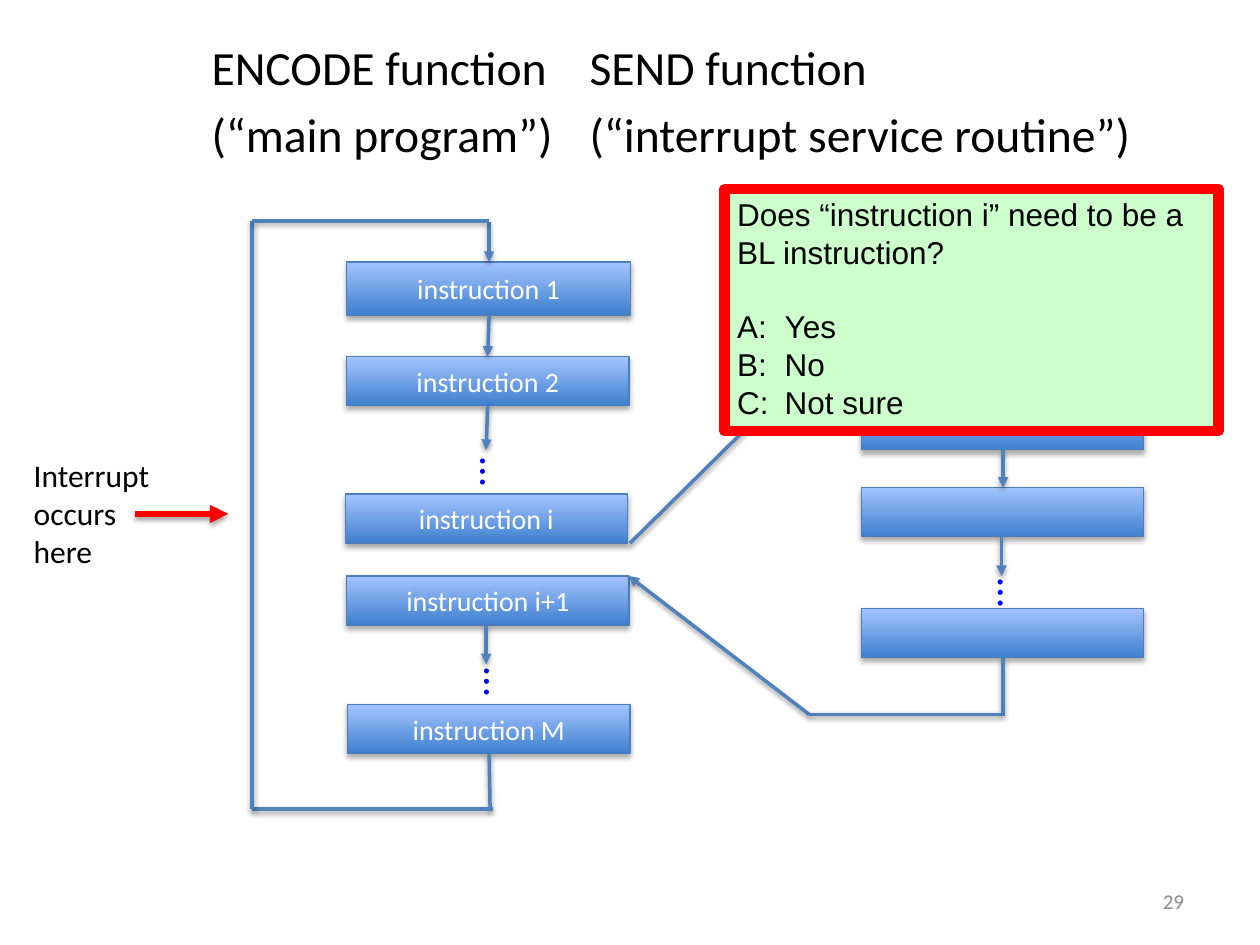
from lxml import etree
from pptx import Presentation
from pptx import util as u
from pptx.dml.color import RGBColor
from pptx.enum import shapes, text
from pptx.oxml import ns

COLORS = {
    "black": "000000", "white": "FFFFFF", "gray": "8C8C8C",
    "box_bottom": "3F80CE", "box_top": "A4C4FF", "box_line": "4B7EBC",
    "arrow": "4F81BD", "dots": "0000FF", "red": "FF0000", "panel": "CCFFCC",
}
BOX_WIDTH, BOX_HEIGHT = 5.69, 0.99


def rgb(name):
    return RGBColor.from_string(COLORS[name])


def add_element(parent, tag, **attributes):
    return etree.SubElement(parent, ns.qn(tag), attributes)


def lengths(*values):
    return [u.Cm(value) for value in values]


def set_lines(text_frame, lines, size, color, font="Calibri", align=None):
    text_frame.text = "\n".join(lines)
    for paragraph in text_frame.paragraphs:
        paragraph.alignment = align
        for run in paragraph.runs:
            run.font.size = u.Pt(size)
            run.font.name = font
            run.font.color.rgb = rgb(color)


def add_tab(paragraph, position):
    tabs = add_element(paragraph._p.get_or_add_pPr(), "a:tabLst")
    add_element(tabs, "a:tab", pos=str(u.Cm(position)), algn="l")


def add_shadow(effects, distance, opacity):
    shadow = add_element(effects, "a:outerShdw", blurRad=str(u.Pt(3.1)),
                         dist=str(u.Pt(distance)), dir="5400000", rotWithShape="0")
    color = add_element(shadow, "a:srgbClr", val=COLORS["black"])
    add_element(color, "a:alpha", val=str(opacity * 1000))


def add_heading(slide):
    title = slide.shapes.title
    title._element.getparent().remove(title._element)
    body = slide.placeholders[1]
    body.left, body.top, body.width, body.height = lengths(4.01, 0.64, 20.32, 3.07)
    frame = body.text_frame
    frame.auto_size = text.MSO_AUTO_SIZE.NONE
    set_lines(frame, ["ENCODE function\tSEND function",
                      "(“main program”)\t(“interrupt service routine”)"], 27.2, "black")
    for paragraph, position, space in zip(frame.paragraphs, (13.27, 8.63), (0, 5.4)):
        properties = paragraph._p.get_or_add_pPr()
        properties.set("marL", "0")
        properties.set("indent", "0")
        add_element(properties, "a:buNone")
        add_tab(paragraph, position)
        paragraph.space_before = u.Pt(space)


def add_text(slide, lines, box, size, color, align=None, rotation=0, wrap=True,
             anchor=text.MSO_ANCHOR.MIDDLE):
    textbox = slide.shapes.add_textbox(*lengths(*box))
    textbox.rotation = rotation
    textbox.text_frame.word_wrap = wrap
    textbox.text_frame.vertical_anchor = anchor
    set_lines(textbox.text_frame, lines, size, color, align=align)


def add_box(slide, label, left, top, width=BOX_WIDTH, height=BOX_HEIGHT):
    box = slide.shapes.add_shape(shapes.MSO_SHAPE.RECTANGLE, *lengths(left, top, width, height))
    box.fill.gradient()
    box.fill.gradient_angle = 90
    for stop, position, color in zip(box.fill.gradient_stops, (0, 1), ("box_bottom", "box_top")):
        stop.position = position
        stop.color.rgb = rgb(color)
    box.line.color.rgb = rgb("box_line")
    box.line.width = u.Pt(0.75)
    box.shadow.inherit = False
    add_shadow(box._element.spPr.find(ns.qn("a:effectLst")), 1.8, 35)
    if label:
        box.text_frame.vertical_anchor = text.MSO_ANCHOR.MIDDLE
        set_lines(box.text_frame, [label], 16, "white", align=text.PP_ALIGN.CENTER)


def add_line(slide, ends, arrow=False, color="arrow", width=2):
    line = slide.shapes.add_connector(shapes.MSO_CONNECTOR.STRAIGHT, *lengths(*ends))
    line.line.color.rgb = rgb(color)
    line.line.width = u.Pt(width)
    if arrow:
        add_element(line.line._get_or_add_ln(), "a:tailEnd", type="triangle")
    add_shadow(add_element(line._element.spPr, "a:effectLst"), 1.6, 38)


def add_question(slide):
    panel = slide.shapes.add_shape(shapes.MSO_SHAPE.RECTANGLE, *lengths(14.61, 3.81, 9.96, 4.88))
    panel.fill.solid()
    panel.fill.fore_color.rgb = rgb("panel")
    panel.line.color.rgb = rgb("red")
    panel.line.width = u.Pt(6)
    panel.shadow.inherit = False
    frame = panel.text_frame
    frame.word_wrap = True
    frame.vertical_anchor = text.MSO_ANCHOR.TOP
    set_lines(frame, ["Does “instruction i” need to be a BL instruction?",
                      "A:\tYes", "B:\tNo", "C:\tNot sure"],
              18, "black", "Arial", text.PP_ALIGN.LEFT)
    for paragraph in frame.paragraphs[1:]:
        add_tab(paragraph, 0.96)
    frame.paragraphs[1].space_before = u.Pt(20.7)


def main():
    presentation = Presentation()
    presentation.slide_width, presentation.slide_height = lengths(25.4, 19.05)
    slide = presentation.slides.add_slide(presentation.slide_layouts[1])
    add_heading(slide)
    add_text(slide, ["29"], (18.2, 17.65, 5.92, 1.02), 12, "gray", text.PP_ALIGN.RIGHT)

    add_box(slide, "instruction 1", 6.99, 5.28, 5.72, 1.07)
    for label, left, top in (("instruction 2", 6.99, 7.19), ("instruction i", 6.96, 9.96),
                             ("instruction i+1", 6.99, 11.61), ("instruction M", 7.01, 14.2)):
        add_box(slide, label, left, top)
    for top in (8.08, 9.83, 12.27):
        add_box(slide, "", 17.37, top)

    for ends in ((9.86, 6.35, 9.83, 7.19), (9.83, 8.18, 9.8, 9.07), (9.8, 12.6, 9.8, 13.39),
                 (9.86, 4.47, 9.86, 5.28), (20.22, 9.07, 20.22, 9.83),
                 (20.19, 10.82, 20.19, 11.61), (16.31, 14.4, 12.67, 11.61)):
        add_line(slide, ends, arrow=True)
    for ends in ((9.86, 15.19, 9.88, 16.31), (9.93, 16.31, 5.08, 16.31),
                 (5.08, 16.31, 5.08, 4.45), (5.08, 4.45, 9.86, 4.45),
                 (12.7, 10.95, 16.51, 7.19), (20.22, 13.26, 20.22, 14.43),
                 (20.19, 14.4, 16.31, 14.4)):
        add_line(slide, ends)

    for left, top in ((8.08, 13.26), (8, 9.02), (18.44, 11.46)):
        add_text(slide, ["…"], (left, top, 4.04, BOX_HEIGHT), 24, "dots",
                 text.PP_ALIGN.CENTER, rotation=90)
    add_text(slide, ["Interrupt", "occurs", "here"], (0.43, 9.07, 2.87, 2.57), 18, "black",
             wrap=False, anchor=text.MSO_ANCHOR.TOP)
    add_line(slide, (2.72, 10.36, 4.6, 10.36), arrow=True, color="red", width=3.5)
    add_question(slide)
    presentation.save("out.pptx")


if __name__ == "__main__":
    main()
